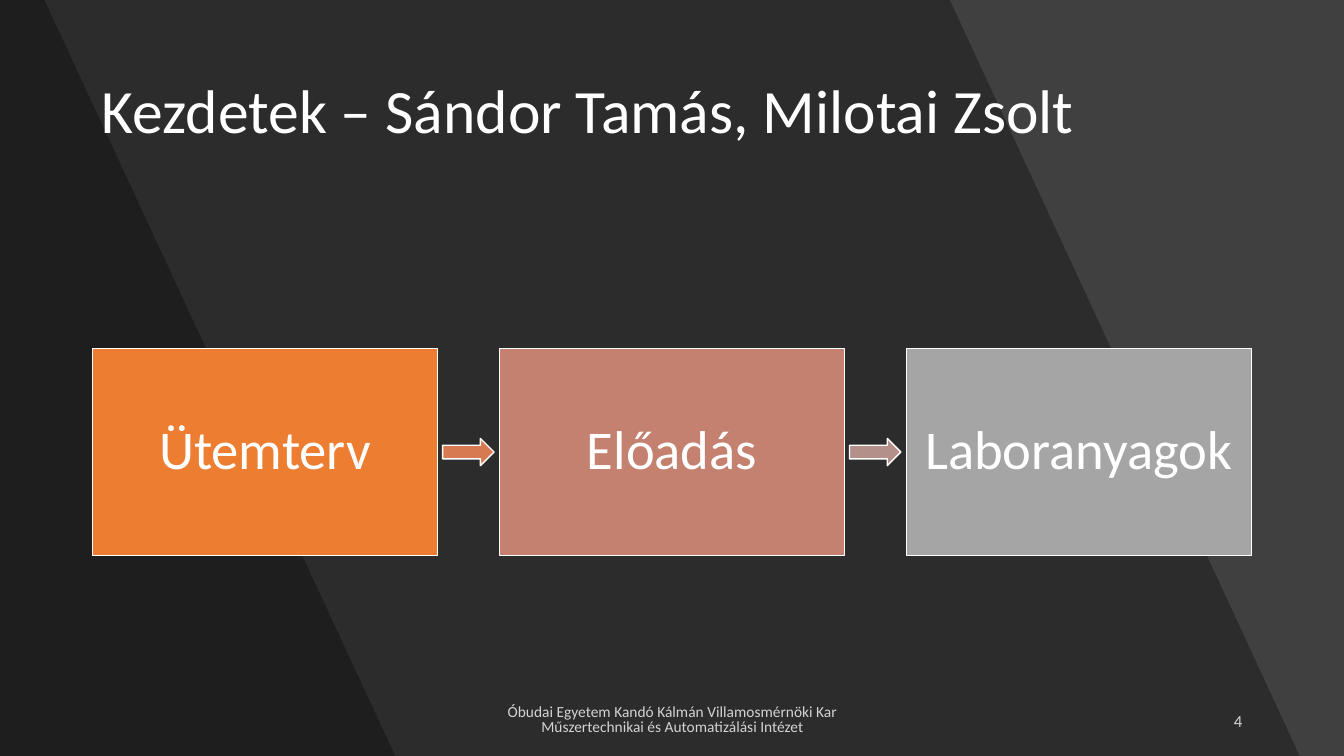
import pptx
import pptx.dml.color
import pptx.enum.shapes
import pptx.enum.text
import pptx.oxml
import pptx.oxml.ns
import pptx.util
from dataclasses import dataclass
from pptx.util import Inches

COLORS = {"background": "404040", "shade": "000000", "text": "FFFFFF"}
FONT = "Calibri"
ALIGN = pptx.enum.text.PP_ALIGN
SHAPE = pptx.enum.shapes.MSO_SHAPE

STEP_LEFT, STEP_TOP, STEP_WIDTH, STEP_HEIGHT = 0.92, 3.46, 3.42, 2.05
LAST_STEP_LEFT = 8.99
ARROW_GAP, ARROW_WIDTH, ARROW_HEIGHT = 0.05, 0.51, 0.27


@dataclass
class Step:
    label: str
    fill: str
    arrow_fill: str | None = None


@dataclass
class Band:
    top_right: float
    bottom_right: float


@dataclass
class FooterText:
    text: str
    left: float
    width: float
    size: float
    align: ALIGN
    line_spacing: float


STEPS = [
    Step("Ütemterv", "ED7D31", "D87A51"),
    Step("Előadás", "C48170", "B4908B"),
    Step("Laboranyagok", "A5A5A5"),
]
STEP_PITCH = (LAST_STEP_LEFT - STEP_LEFT) / (len(STEPS) - 1)
BANDS = [Band(9.42, 12.89), Band(0.44, 3.92)]
FOOTER = [
    FooterText("Óbudai Egyetem Kandó Kálmán Villamosmérnöki Kar "
               "Műszertechnikai és Automatizálási Intézet",
               4.42, 4.5, 11, ALIGN.CENTER, 0.8),
    FooterText("4", 9.42, 3, 12, ALIGN.RIGHT, 1.0),
]


def color(hex_value: str) -> pptx.dml.color.RGBColor:
    return pptx.dml.color.RGBColor.from_string(hex_value)


def set_alpha(owner, percent: int) -> None:
    """Make the solid fill inside an XML element partly transparent."""
    rgb = owner.find(".//" + pptx.oxml.ns.qn("a:srgbClr"))
    rgb.append(pptx.oxml.parse_xml(
        f'<a:alpha {pptx.oxml.ns.nsdecls("a")} val="{percent * 1000}"/>'))


def write(frame, text: str, size: float, align: ALIGN, line_spacing: float):
    frame.word_wrap = True
    frame.auto_size = pptx.enum.text.MSO_AUTO_SIZE.NONE
    frame.vertical_anchor = pptx.enum.text.MSO_ANCHOR.MIDDLE
    paragraph = frame.paragraphs[0]
    paragraph.alignment = align
    paragraph.line_spacing = line_spacing
    run = paragraph.add_run()
    run.text = text
    run.font.name = FONT
    run.font.size = pptx.util.Pt(size)
    run.font.color.rgb = color(COLORS["text"])
    return run


def draw_band(slide, band: Band) -> None:
    builder = slide.shapes.build_freeform(0, 0)
    builder.add_line_segments([
        (Inches(band.top_right), 0),
        (Inches(band.bottom_right), Inches(7.5)),
        (0, Inches(7.5)),
    ], close=True)
    shade = builder.convert_to_shape()
    shade.shadow.inherit = False
    shade.fill.solid()
    shade.fill.fore_color.rgb = color(COLORS["shade"])
    set_alpha(shade.fill._xPr, 30)
    shade.line.fill.background()


def add_block(slide, kind: SHAPE, left: float, top: float, width: float,
              height: float, fill: str):
    block = slide.shapes.add_shape(
        kind, Inches(left), Inches(top), Inches(width), Inches(height))
    block.shadow.inherit = False
    block.fill.solid()
    block.fill.fore_color.rgb = color(fill)
    block.line.color.rgb = color(COLORS["text"])
    block.line.width = pptx.util.Pt(1)
    return block


def draw_step(slide, index: int, step: Step) -> None:
    left = STEP_LEFT + index * STEP_PITCH
    box = add_block(slide, SHAPE.RECTANGLE, left, STEP_TOP,
                    STEP_WIDTH, STEP_HEIGHT, step.fill)
    frame = box.text_frame
    frame.margin_left = frame.margin_right = Inches(0.17)
    frame.margin_top = frame.margin_bottom = Inches(0.17)
    write(frame, step.label, 39, ALIGN.CENTER, 0.9)
    if step.arrow_fill:
        add_block(slide, SHAPE.RIGHT_ARROW, left + STEP_WIDTH + ARROW_GAP,
                  STEP_TOP + (STEP_HEIGHT - ARROW_HEIGHT) / 2,
                  ARROW_WIDTH, ARROW_HEIGHT, step.arrow_fill)


def draw_footer(slide, item: FooterText) -> None:
    box = slide.shapes.add_textbox(
        Inches(item.left), Inches(6.95), Inches(item.width), Inches(0.4))
    run = write(box.text_frame, item.text, item.size, item.align,
                item.line_spacing)
    set_alpha(run.font.fill._xPr, 80)


def main() -> None:
    presentation = pptx.Presentation()
    presentation.slide_width = Inches(13.33)
    presentation.slide_height = Inches(7.5)
    slide = presentation.slides.add_slide(presentation.slide_layouts[5])

    # Background with slanted bands
    slide.background.fill.solid()
    slide.background.fill.fore_color.rgb = color(COLORS["background"])
    for band in BANDS:
        draw_band(slide, band)

    # Title, raised in front of the bands
    title = slide.shapes.title
    slide.shapes._spTree.append(title._element)
    title.left, title.top = Inches(0.91), Inches(0.4)
    title.width, title.height = Inches(11.51), Inches(1.45)
    write(title.text_frame, "Kezdetek – Sándor Tamás, Milotai Zsolt",
          44, ALIGN.LEFT, 0.9)

    # Process steps
    for index, step in enumerate(STEPS):
        draw_step(slide, index, step)

    # Footer and slide number
    for item in FOOTER:
        draw_footer(slide, item)

    presentation.save("out.pptx")


if __name__ == "__main__":
    main()
